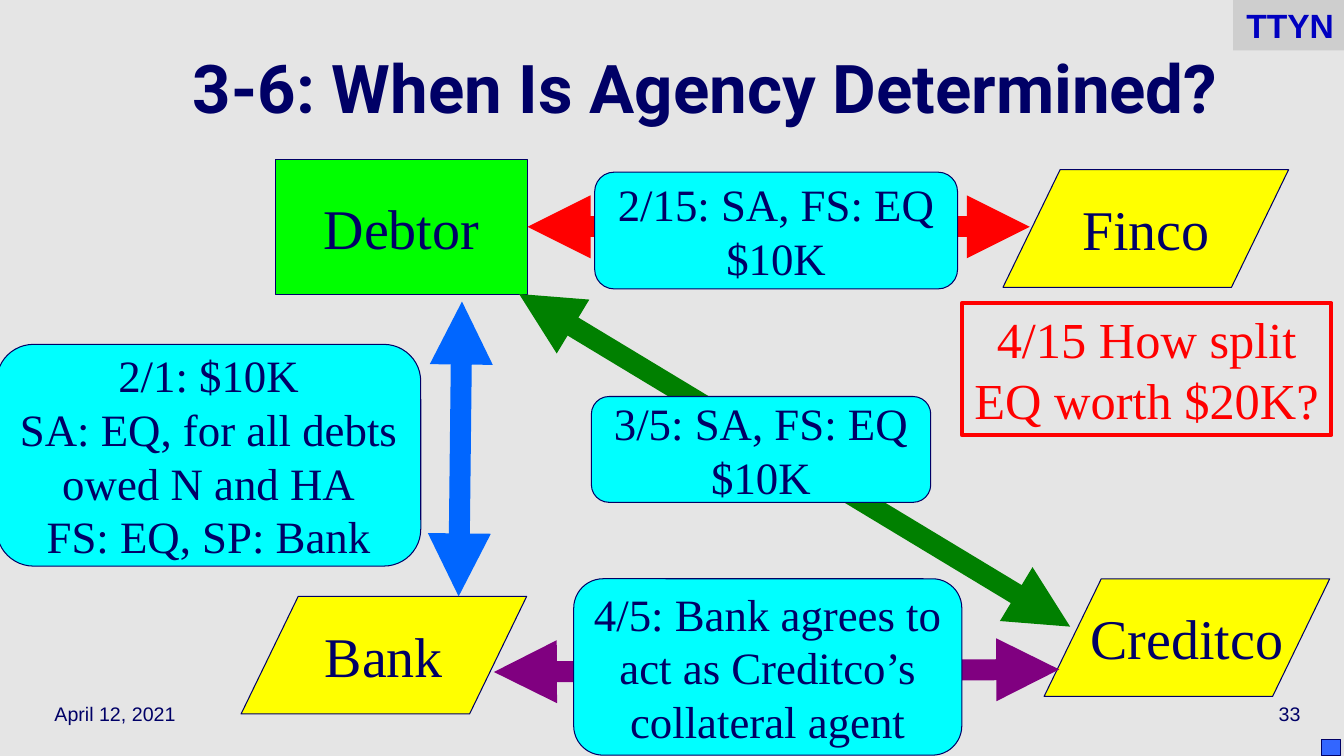
from dataclasses import dataclass

from lxml.etree import SubElement
from pptx import Presentation
from pptx.dml.color import RGBColor
from pptx.enum.shapes import MSO_CONNECTOR, MSO_SHAPE
from pptx.enum.text import MSO_ANCHOR, PP_ALIGN
from pptx.oxml.ns import qn
from pptx.util import Inches, Pt

NAVY = RGBColor(0x00, 0x00, 0x66)
BLUE = RGBColor(0x00, 0x66, 0xFF)
TAG_BLUE = RGBColor(0x00, 0x00, 0xC0)
CORNER_BLUE = RGBColor(0x33, 0x66, 0xFF)
RED = RGBColor(0xFF, 0x00, 0x00)
GREEN = RGBColor(0x00, 0x80, 0x00)
LIME = RGBColor(0x00, 0xFF, 0x00)
PURPLE = RGBColor(0x80, 0x00, 0x80)
YELLOW = RGBColor(0xFF, 0xFF, 0x00)
CYAN = RGBColor(0x00, 0xFF, 0xFF)
PALE_GRAY = RGBColor(0xE5, 0xE5, 0xE5)
TAG_GRAY = RGBColor(0xCE, 0xCE, 0xCE)

SERIF, SANS, HEADING = "Times New Roman", "Arial", "Roboto"

WIDTH, HEIGHT = Inches(13.33), Inches(7.5)
COLUMNS, ROWS = 160, 90
PARTY_SIZE = (34, 14)
FOOTER_SIZE = (33.4, 6)


@dataclass(frozen=True)
class Area:
    """A rectangle in grid columns and rows."""
    left: float
    top: float
    width: float
    height: float


@dataclass(frozen=True)
class Party:
    name: str
    area: Area
    kind: MSO_SHAPE = MSO_SHAPE.FLOWCHART_DATA
    fill: RGBColor = YELLOW


@dataclass(frozen=True)
class Deal:
    """A two-headed arrow between two parties."""
    color: RGBColor
    start: tuple[float, float]
    end: tuple[float, float]
    starts_at: str | None = None


@dataclass(frozen=True)
class Terms:
    text: str
    area: Area


PARTIES = [
    Party("Bank", Area(28.7, 71, *PARTY_SIZE)),
    Party("Debtor", Area(32.8, 19, 30, 16), MSO_SHAPE.FLOWCHART_PROCESS, LIME),
    Party("Finco", Area(119.4, 20.2, *PARTY_SIZE)),
    Party("Creditco", Area(124.3, 68.9, *PARTY_SIZE)),
]
DEALS = [
    Deal(GREEN, (61.8, 35), (127.4, 74.6)),
    Deal(RED, (62.8, 27), (122.6, 27), starts_at="Debtor"),
    Deal(BLUE, (54.6, 71), (55, 35.9)),
    Deal(PURPLE, (58.8, 80), (126.1, 79.7)),
]
TERMS = [
    Terms("2/1: $10K\nSA: EQ, for all debts owed N and HA\nFS: EQ, SP: Bank",
          Area(-0.4, 41, 50.5, 26.4)),
    Terms("3/5: SA, FS: EQ\n$10K", Area(70.4, 47.2, 40.4, 12.6)),
    Terms("2/15: SA, FS: EQ\n$10K", Area(70.8, 20.5, 43.2, 13.9)),
    Terms("4/5: Bank agrees to act as Creditco’s collateral agent",
          Area(68.3, 68.9, 46.2, 21)),
]


def across(columns: float) -> int:
    return round(WIDTH * columns / COLUMNS)


def down(rows: float) -> int:
    return round(HEIGHT * rows / ROWS)


def bounds(area: Area) -> tuple[int, int, int, int]:
    return across(area.left), down(area.top), across(area.width), down(area.height)


def write(box, text: str, *, size: float, font: str = SERIF, color: RGBColor = NAVY,
          bold: bool = False, align=PP_ALIGN.CENTER, anchor=MSO_ANCHOR.MIDDLE,
          wrap: bool = True, line_spacing: float | None = None) -> None:
    frame = box.text_frame
    frame.word_wrap = wrap
    frame.vertical_anchor = anchor
    for index, line in enumerate(text.split("\n")):
        para = frame.add_paragraph() if index else frame.paragraphs[0]
        para.alignment = align
        para.line_spacing = line_spacing
        span = para.add_run()
        span.text = line
        span.font.size = Pt(size)
        span.font.name = font
        span.font.bold = bold
        span.font.color.rgb = color


def draw_shape(page, kind, area: Area, *, fill: RGBColor | None = None,
               line: RGBColor | None = NAVY, weight: float = 0.75):
    shape = page.shapes.add_shape(kind, *bounds(area))
    shape.shadow.inherit = False
    if fill is None:
        shape.fill.background()
    else:
        shape.fill.solid()
        shape.fill.fore_color.rgb = fill
    if line is None:
        shape.line.fill.background()
    else:
        shape.line.color.rgb = line
        shape.line.width = Pt(weight)
    return shape


def draw_deal(page, deal: Deal, boxes: dict) -> None:
    arrow = page.shapes.add_connector(
        MSO_CONNECTOR.STRAIGHT, across(deal.start[0]), down(deal.start[1]),
        across(deal.end[0]), down(deal.end[1]))
    if deal.starts_at:
        arrow.begin_connect(boxes[deal.starts_at], 3)
    arrow.line.color.rgb = deal.color
    arrow.line.width = Pt(15)
    outline = arrow.line._get_or_add_ln()
    for end in ("a:headEnd", "a:tailEnd"):
        SubElement(outline, qn(end), type="triangle")
    SubElement(arrow._element.spPr, qn("a:effectLst"))


def draw_footer(page, text: str, left: float, align) -> None:
    box = page.shapes.add_textbox(*bounds(Area(left, 82, *FOOTER_SIZE)))
    write(box, text, size=14, font=SANS, align=align)


def main() -> None:
    deck = Presentation()
    deck.slide_width, deck.slide_height = WIDTH, HEIGHT
    page = deck.slides.add_slide(deck.slide_layouts[5])
    page.background.fill.solid()
    page.background.fill.fore_color.rgb = PALE_GRAY

    title = page.shapes.title
    title.left, title.top, title.width, title.height = bounds(Area(10.7, 4, 146.6, 15))
    write(title, "3-6: When Is Agency Determined?", size=48, font=HEADING,
          bold=True, line_spacing=0.7)
    draw_footer(page, "April 12, 2021", 5.3, PP_ALIGN.LEFT)
    draw_footer(page, "33", 122.6, PP_ALIGN.RIGHT)

    boxes = {}
    for party in PARTIES:
        box = draw_shape(page, party.kind, party.area, fill=party.fill)
        write(box, party.name, size=40, wrap=False)
        boxes[party.name] = box
    for deal in DEALS:
        draw_deal(page, deal, boxes)
    for terms in TERMS:
        box = draw_shape(page, MSO_SHAPE.FLOWCHART_ALTERNATE_PROCESS, terms.area, fill=CYAN)
        write(box, terms.text, size=32)

    question = draw_shape(page, MSO_SHAPE.RECTANGLE, Area(114.5, 36.1, 44, 15.7),
                          line=RED, weight=3)
    write(question, "4/15 How split EQ worth $20K?", size=36, color=RED,
          anchor=MSO_ANCHOR.TOP)
    draw_shape(page, MSO_SHAPE.RECTANGLE, Area(157.3, 88, 2.3, 2), fill=CORNER_BLUE)
    tag = draw_shape(page, MSO_SHAPE.RECTANGLE, Area(146.8, 0, 13.2, 6),
                     fill=TAG_GRAY, line=None)
    write(tag, "TTYN", size=24, font=SANS, color=TAG_BLUE, bold=True,
          align=PP_ALIGN.RIGHT, anchor=MSO_ANCHOR.TOP)

    deck.save("out.pptx")


if __name__ == "__main__":
    main()
